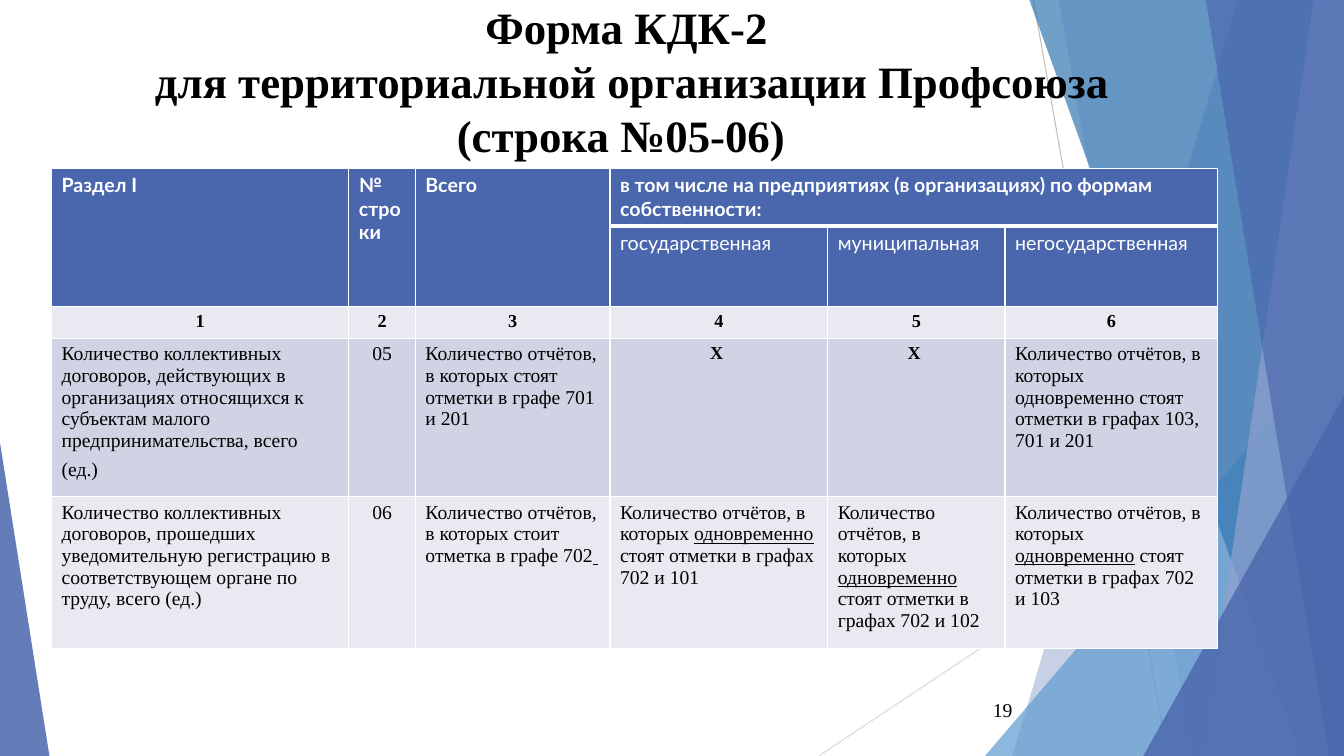
import pptx
import pptx.util
from pptx.dml.color import RGBColor
from pptx.enum.shapes import MSO_CONNECTOR, MSO_SHAPE
from pptx.enum.text import MSO_ANCHOR, PP_ALIGN
from pptx.oxml.ns import qn
from lxml import etree

Pt = pptx.util.Pt
prs = pptx.Presentation()
prs.slide_width = pptx.util.Inches(13.33)
prs.slide_height = pptx.util.Inches(7.5)
s = prs.slides.add_slide(prs.slide_layouts[6])
# One percent of the slide's width and height
W, H = prs.slide_width / 100, prs.slide_height / 100


def paint(fill, color, alpha=100):
    fill.solid()
    fill.fore_color.rgb = RGBColor.from_string(color)
    if alpha < 100:
        clr = fill._xPr.find(qn("a:solidFill"))[0]
        etree.SubElement(clr, qn("a:alpha"), val=str(alpha * 1000))


def style(p, size, font="Times New Roman", color="000000", bold=False, align=PP_ALIGN.LEFT):
    p.font.size, p.font.name, p.font.bold = Pt(size), font, bold
    p.font.color.rgb = RGBColor.from_string(color)
    p.alignment = align


# Thin background lines: x1, y1, x2, y2, colour
for x1, y1, x2, y2, color in [(76.89, 0, 86.87, 100, "BFBFBF"),
                              (100, 53.73, 60.92, 100, "D9D9D9")]:
    line = s.shapes.add_connector(MSO_CONNECTOR.STRAIGHT, int(x1 * W), int(y1 * H),
                                  int(x2 * W), int(y2 * H))
    line.line.width = Pt(0.75)
    paint(line.line.fill, color)
    etree.SubElement(line._element.spPr, qn("a:effectLst"))

# Facets: a band to the right edge (top x, bottom x),
# or a right triangle standing on the bottom edge (left, top, width, apex)
facets = [
    ("band", (92.12, 75.32), "4A66AC", 30),
    ("band", (78.77, 88.75), "4A66AC", 20),
    ("triangle", (73.29, 44.4, 26.71, 1), "629DD1", 72),
    ("band", (76.59, 96.85), "3477B2", 70),
    ("band", (97.75, 89.42), "90A2CF", 70),
    ("band", (89.72, 98.87), "4A66AC", 65),
    ("triangle", (85.07, 52.4, 14.93, 1), "4A66AC", 80),
    ("triangle", (0, 58.53, 3.68, 0), "4A66AC", 85),
]
for kind, place, color, alpha in facets:
    if kind == "band":
        top, bottom = place
        fb = s.shapes.build_freeform(int(top * W), 0)
        fb.add_line_segments([(int(100 * W), 0), (int(100 * W), int(100 * H)),
                              (int(bottom * W), int(100 * H))], close=True)
        sp = fb.convert_to_shape()
    else:
        left, top, width, apex = place
        sp = s.shapes.add_shape(MSO_SHAPE.ISOSCELES_TRIANGLE, int(left * W), int(top * H),
                                int(width * W), int((100 - top) * H))
        sp.adjustments[0] = apex
    paint(sp.fill, color, alpha)
    sp.line.fill.background()
    sp.shadow.inherit = False

# Title and slide number
texts = [
    (7.2, 2.8, 78.84, 18.4, 32, True, PP_ALIGN.CENTER,
     "Форма КДК-2\v для территориальной организации Профсоюза (строка №05-06) "),
    (70.44, 92, 5.63, 3.87, 14, False, PP_ALIGN.RIGHT, "19"),
]
for left, top, width, height, size, bold, align, text in texts:
    tf = s.shapes.add_textbox(int(left * W), int(top * H), int(width * W), int(height * H)).text_frame
    tf.word_wrap = True
    tf.vertical_anchor = MSO_ANCHOR.MIDDLE
    p = tf.paragraphs[0]
    p.text = text
    style(p, size, bold=bold, align=align)
    if bold:
        p.line_spacing = Pt(38.6)
        tf.margin_bottom = pptx.util.Inches(0.25)

# Table: underlined words stand between "_" marks, "\n" starts a paragraph
rows = [
    ["Раздел I", "№ строки", "Всего",
     "в том числе на предприятиях (в организациях) по формам собственности:", "", ""],
    ["", "", "", "государственная", "муниципальная", "негосударственная"],
    ["1", "2", "3", "4", "5", "6"],
    ["Количество коллективных договоров, действующих в организациях относящихся "
     "к субъектам малого предпринимательства, всего\n(ед.)", "05",
     "Количество отчётов, в которых стоят отметки в графе 701 и 201", "Х ", "Х ",
     "Количество отчётов, в которых одновременно стоят отметки в графах 103, 701 и 201"],
    ["Количество коллективных договоров, прошедших уведомительную регистрацию "
     "в соответствующем органе по труду, всего (ед.)", "06",
     "Количество отчётов, в которых стоит отметка в графе 702_ _"]
    + [f"Количество отчётов, в которых _одновременно_ стоят отметки в графах 702 и {n}"
       for n in (101, 102, 103)],
]
col_widths = [22.13, 4.95, 14.48, 16.2, 13.2, 15.83]
row_heights = [7.6, 10.6, 4.1, 19.7, 18.6]
row_fills = ["4A66AC", "4A66AC", "E9EAF1", "D0D3E3", "E9EAF1"]
tbl = s.shapes.add_table(len(rows), len(col_widths), int(3.83 * W), int(22.27 * H),
                         int(sum(col_widths) * W), int(sum(row_heights) * H)).table
for col, width in zip(tbl.columns, col_widths):
    col.width = int(width * W)
for row, height in zip(tbl.rows, row_heights):
    row.height = int(height * H)
for i in range(3):
    tbl.cell(0, i).merge(tbl.cell(1, i))
tbl.cell(0, 3).merge(tbl.cell(0, 5))

for i, row in enumerate(rows):
    for j, text in enumerate(row):
        cell = tbl.cell(i, j)
        # White borders, thicker under the first row
        tcPr = cell._tc.get_or_add_tcPr()
        for side in ("L", "R", "T", "B"):
            heavy = (i, side) in [(0, "B"), (1, "T")] and j > 2
            ln = etree.SubElement(tcPr, qn("a:ln" + side), w=str(Pt(3 if heavy else 1)))
            solid = etree.SubElement(ln, qn("a:solidFill"))
            etree.SubElement(solid, qn("a:srgbClr"), val="FFFFFF")
        paint(cell.fill, row_fills[i])
        if not text:
            continue
        tf = cell.text_frame
        for k, part in enumerate(text.split("\n")):
            p = tf.add_paragraph() if k else tf.paragraphs[0]
            if k:
                p.space_before = Pt(5)
            for m, piece in enumerate(part.split("_")):
                if piece:
                    r = p.add_run()
                    r.text = piece
                    if m % 2:
                        r.font.underline = True
            if i < 2:
                style(p, 14, "Lato", "FFFFFF", bold=i == 0)
            else:
                strong = i == 2 or text == "Х "
                centred = strong or j == 1
                style(p, 13 if strong else 14, bold=strong,
                      align=PP_ALIGN.CENTER if centred else PP_ALIGN.LEFT)

prs.save("out.pptx")
